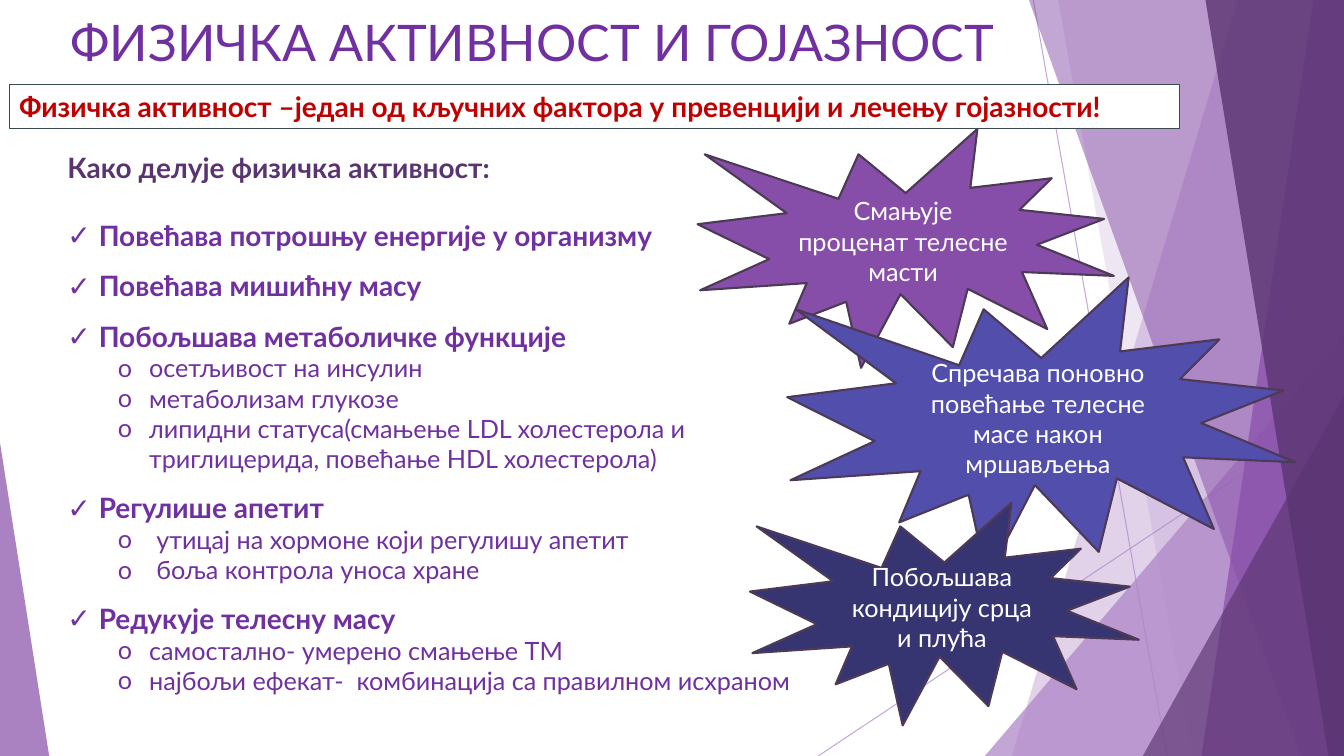
from lxml import etree
from pptx import Presentation
from pptx.dml.color import RGBColor
from pptx.enum.shapes import MSO_CONNECTOR, MSO_SHAPE
from pptx.enum.text import MSO_ANCHOR, PP_ALIGN
from pptx.oxml.ns import qn
from pptx.util import Cm, Pt

RECT = MSO_SHAPE.RECTANGLE
WEDGE = MSO_SHAPE.ISOSCELES_TRIANGLE
BURST = MSO_SHAPE.EXPLOSION1
STRAIGHT = MSO_CONNECTOR.STRAIGHT
TOP, MIDDLE = MSO_ANCHOR.TOP, MSO_ANCHOR.MIDDLE
LEFT, CENTER = PP_ALIGN.LEFT, PP_ALIGN.CENTER


class Theme:
    font = "Lato"
    white, lilac, violet, plum = "FFFFFF", "AD84C6", "874EA9", "5A3471"
    purple, red, slate, edge = "7030A0", "C00000", "3A4B50", "4C3A57"
    blue, navy = "524EAB", "373472"
    title, head, text = 36, 20, 18


# (level, text); level 0 is the heading
POINTS = [
    (0, "Како делује физичка активност:"),
    (1, "Повећава потрошњу енергије у организму"),
    (1, "Повећава мишићну масу"),
    (1, "Побољшава метаболичке функције"),
    (2, "осетљивост на инсулин"),
    (2, "метаболизам глукозе"),
    (2, "липидни статуса(смањење LDL холестерола и "
        "триглицерида, повећање HDL холестерола)"),
    (1, "Регулише апетит"),
    (3, "утицај на хормоне који регулишу апетит"),
    (3, "боља контрола уноса хране"),
    (1, "Редукује телесну масу"),
    (2, "самостално- умерено смањење ТМ"),
    (2, "најбољи ефекат-  комбинација са правилном исхраном"),
]
# level: (bullet, left margin, hanging indent)
BULLETS = {1: ("✓", 0.79, 0.79), 2: ("o", 2.06, 0.79), 3: ("o", 2.24, 0.97)}

BURSTS = [
    ("Смањује проценат телесне масти", (17.58, 3.25, 10.49, 6.02), Theme.violet),
    ("Спречава поновно повећање телесне масе након мршављења",
     (19.84, 6.99, 12.8, 7.57), Theme.blue),
    ("Побољшава кондицију срца и плућа", (18.9, 12.67, 9.8, 5.61), Theme.navy),
]


def cms(box):
    return [Cm(n) for n in box]


def style(para, size, color, bold=False):
    for run in para.runs:
        font = run.font
        font.name, font.size, font.bold = Theme.font, Pt(size), bold
        font.color.rgb = RGBColor.from_string(color)


def paint(shape, color, alpha=None):
    shape.shadow.inherit = False
    shape.fill.solid()
    shape.fill.fore_color.rgb = RGBColor.from_string(color)
    shape.line.fill.background()
    if alpha:
        fade(shape, alpha)


def fade(shape, alpha):
    """Set the opacity, in percent, of the shape's first colour."""
    color = next(shape._element.spPr.iter(qn("a:srgbClr")))
    etree.SubElement(color, qn("a:alpha"), val=str(alpha * 1000))


def border(shape, color, width):
    shape.line.color.rgb = RGBColor.from_string(color)
    shape.line.width = Pt(width)


def backdrop(slide, box):
    x, y, w, h = box
    right, base = x + w, y + h
    shapes = slide.shapes

    def ray(x1, y1, x2, y2):
        line = shapes.add_connector(STRAIGHT, *cms((x1, y1, x2, y2)))
        border(line, Theme.lilac, 0.75)
        fade(line, 70)
        etree.SubElement(line._element.spPr, qn("a:effectLst"))

    def band(top, foot, color, alpha):
        """Draw a strip along the right edge, given its top and foot widths."""
        build = shapes.build_freeform(Cm(right - top), Cm(y))
        build.add_line_segments([cms(p) for p in (
            (right, y), (right, base), (right - foot, base))])
        paint(build.convert_to_shape(), color, alpha)

    def wedge(left, wide, high, tip, color, alpha):
        shape = shapes.add_shape(WEDGE, *cms((left, base - high, wide, high)))
        shape.adjustments[0] = tip
        paint(shape, color, alpha)

    ray(right - 7.83, y, right - 4.46, base)
    ray(right, base - 8.81, right - 13.25, base)
    band(2.68, 8.37, Theme.lilac, 36)
    band(7.2, 3.82, Theme.lilac, 20)
    wedge(right - 9.05, 9.05, 10.59, 1, Theme.lilac, 72)
    band(7.94, 1.08, Theme.violet, 50)
    band(0.77, 3.59, Theme.violet, 70)
    band(3.49, 0.39, Theme.plum, 80)
    wedge(right - 5.07, 5.07, 9.07, 1, Theme.plum, 66)
    wedge(x, 1.24, 7.9, 0, Theme.violet, 70)


def title(slide, box):
    shape = slide.shapes.title
    shape.left, shape.top, shape.width, shape.height = cms(box)
    frame = shape.text_frame
    frame.text = "ФИЗИЧКА АКТИВНОСТ И ГОЈАЗНОСТ "
    frame.vertical_anchor = TOP
    para = frame.paragraphs[0]
    para.alignment = CENTER
    style(para, Theme.title, Theme.purple)


def label(slide, kind, box, text, fill, align):
    """Add a filled shape with wrapped text; return it and its paragraph."""
    shape = slide.shapes.add_shape(kind, *cms(box))
    paint(shape, fill)
    frame = shape.text_frame
    frame.text = text
    frame.word_wrap = True
    frame.vertical_anchor = MIDDLE
    para = frame.paragraphs[0]
    para.alignment = align
    return shape, para


def banner(slide, box):
    text = ("Физичка активност –један од кључних фактора "
            "у превенцији и лечењу гојазности!")
    shape, para = label(slide, RECT, box, text, Theme.white, LEFT)
    border(shape, Theme.slate, 0.75)
    style(para, Theme.head, Theme.red, True)


def burst(slide, box, text, fill):
    shape, para = label(slide, BURST, box, text, fill, CENTER)
    border(shape, Theme.edge, 1.5)
    style(para, Theme.text, Theme.white)


def bullet(para, mark, margin, hang):
    props = para._p.get_or_add_pPr()
    props.set("marL", str(Cm(margin)))
    props.set("indent", str(-Cm(hang)))
    etree.SubElement(props, qn("a:buFont"), typeface=Theme.font)
    etree.SubElement(props, qn("a:buChar"), char=mark)


def points(slide, box):
    frame = slide.shapes.add_textbox(*cms(box)).text_frame
    frame.word_wrap = True
    frame.text = "\n".join(text for _, text in POINTS)
    last = None
    for para, (level, _) in zip(frame.paragraphs, POINTS):
        if level:
            bullet(para, *BULLETS[level])
        if level == 1:
            para.space_before = Pt(24 if last == 0 else 12)
        if level > 1:
            para.level = 1
        main = level < 2
        style(para, Theme.head if main else Theme.text,
              Theme.purple if level else Theme.plum, main)
        last = level


def main():
    deck = Presentation()
    wide, high = 33.87, 19.05
    deck.slide_width, deck.slide_height = Cm(wide), Cm(high)
    slide = deck.slides.add_slide(deck.slide_layouts[5])
    backdrop(slide, (0, 0, wide, high))
    title(slide, (-0.4, 0.15, 27.96, 2.95))
    points(slide, (1.45, 3.68, 19.76, 14.2))
    banner(slide, (0.23, 2.13, 29.49, 1.12))
    for text, box, fill in BURSTS:
        burst(slide, box, text, fill)
    deck.save("out.pptx")


if __name__ == "__main__":
    main()
